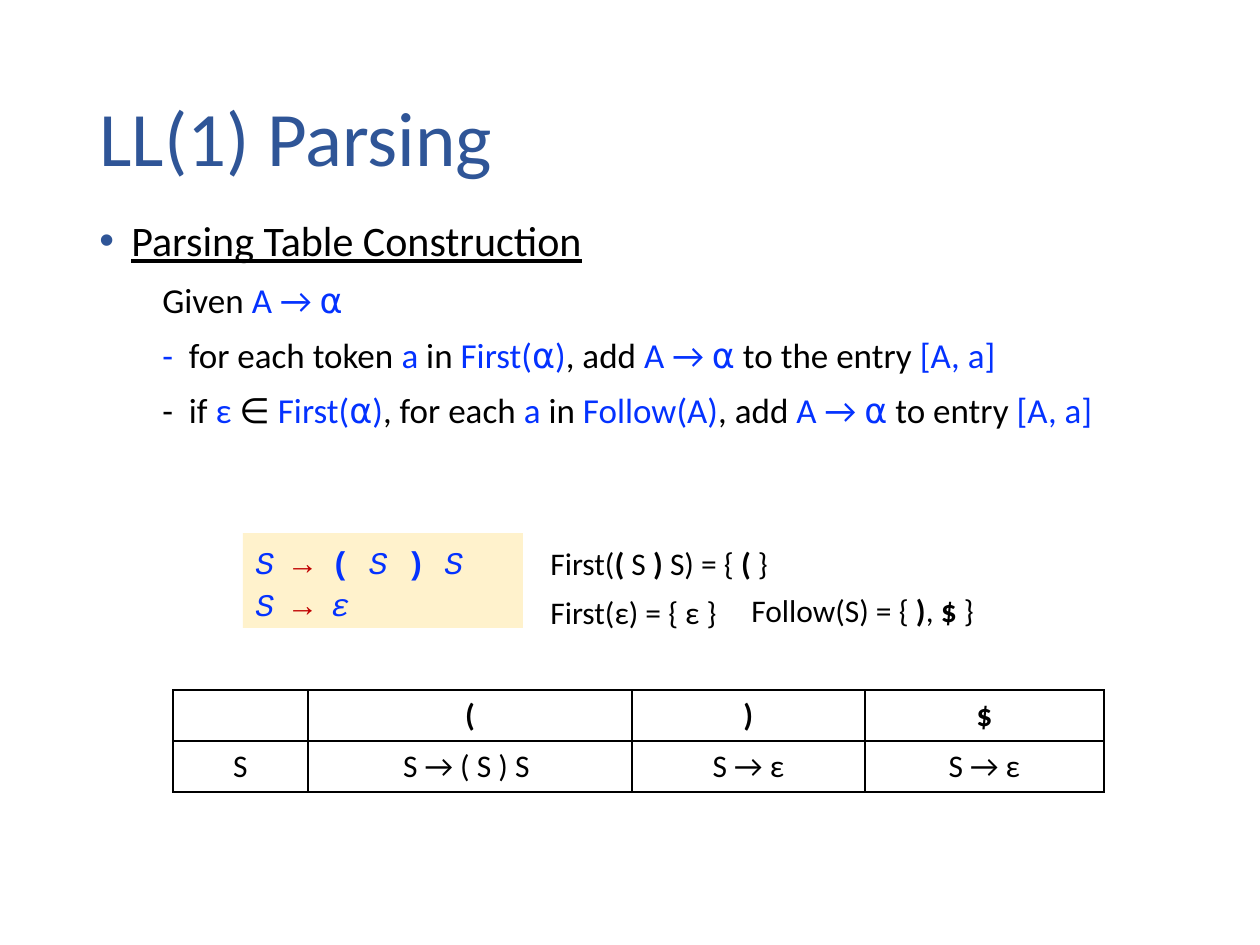
"""Build the LL(1) parsing table construction slide."""
from dataclasses import dataclass, replace
from typing import Optional

from lxml import etree
from pptx import Presentation
from pptx.dml.color import RGBColor
from pptx.enum.shapes import MSO_SHAPE
from pptx.enum.text import MSO_ANCHOR, MSO_AUTO_SIZE, PP_ALIGN
from pptx.oxml.ns import qn
from pptx.util import Emu, Pt

PX = 914400 / 126
CENTER = PP_ALIGN.CENTER
MIDDLE = MSO_ANCHOR.MIDDLE
FIT_SHAPE = MSO_AUTO_SIZE.SHAPE_TO_FIT_TEXT
NO_FIT = MSO_AUTO_SIZE.NONE
RECTANGLE = MSO_SHAPE.RECTANGLE
TITLE_ONLY = 5
COLORS = {"title": "2F5597", "black": "000000", "blue": "0432FF", "red": "C00000", "cream": "FFF2CC"}


@dataclass(frozen=True)
class Style:
    size: int = 18
    color: str = "black"
    font: str = "Calibri"
    bold: bool = False
    italic: bool = False
    underline: bool = False


@dataclass(frozen=True)
class Span:
    text: str
    style: Style


@dataclass(frozen=True)
class Line:
    spans: list[Span]
    indent: int = 0
    bullet: Optional[str] = None


@dataclass(frozen=True)
class TextBlock:
    left: int
    top: int
    width: int
    height: int
    lines: list[Line]
    spacing: object = 1.0
    before: int = 0
    wrap: bool = True
    fit: MSO_AUTO_SIZE = FIT_SHAPE


PLAIN = Style()
BOLD = Style(bold=True)
BODY = Style(size=20)
FORMULA = Style(size=20, color="blue")
VARIABLE = Style(color="blue", font="Courier New", italic=True)
TERMINAL = replace(VARIABLE, italic=False, bold=True)
ARROW = Span("→ ", replace(VARIABLE, italic=False, color="red"))


def px(value: int) -> Emu:
    return Emu(round(value * PX))


def rgb(name: str) -> RGBColor:
    return RGBColor.from_string(COLORS[name])


def alternate(text: str, plain: Style, marked: Style) -> list[Span]:
    """Split text at bars, giving every second part the marked style."""
    parts = text.split("|")
    return [Span(part, (plain, marked)[index % 2]) for index, part in enumerate(parts) if part]


def format_run(run, style: Style) -> None:
    font = run.font
    font.name, font.size = style.font, Pt(style.size)
    font.bold, font.italic, font.underline = style.bold, style.italic, style.underline
    font.color.rgb = rgb(style.color)


def add_spans(para, spans: list[Span]) -> None:
    for span in spans:
        run = para.add_run()
        run.text = span.text
        format_run(run, span.style)


def set_bullet(para, line: Line) -> None:
    properties = para._p.get_or_add_pPr()
    properties.set("marL", str(px(line.indent)))
    properties.set("indent", str(-px(line.indent) if line.bullet else 0))
    if line.bullet:
        color = etree.SubElement(properties, qn("a:buClr"))
        etree.SubElement(color, qn("a:srgbClr"), val=COLORS["title"])
        etree.SubElement(properties, qn("a:buFont"), typeface="Arial")
        etree.SubElement(properties, qn("a:buChar"), char=line.bullet)


def add_text(page, block: TextBlock) -> None:
    box = page.shapes.add_textbox(px(block.left), px(block.top), px(block.width), px(block.height))
    frame = box.text_frame
    frame.word_wrap = block.wrap
    frame.auto_size = block.fit
    for index, line in enumerate(block.lines):
        para = frame.add_paragraph() if index else frame.paragraphs[0]
        para.line_spacing = block.spacing
        para.space_before = Pt(block.before)
        set_bullet(para, line)
        add_spans(para, line.spans)


def add_title(page, text: str) -> None:
    title = page.shapes.title
    title.left, title.top, title.width, title.height = map(px, (87, 50, 1086, 183))
    frame = title.text_frame
    frame.text = text
    frame.auto_size = NO_FIT
    frame.vertical_anchor = MIDDLE
    para = frame.paragraphs[0]
    para.alignment = PP_ALIGN.LEFT
    para.line_spacing = 0.9
    format_run(para.runs[0], Style(size=44, color="title"))


def add_panel(page) -> None:
    panel = page.shapes.add_shape(RECTANGLE, px(243), px(533), px(280), px(95))
    panel.shadow.inherit = False
    panel.fill.solid()
    panel.fill.fore_color.rgb = rgb("cream")
    panel.line.fill.background()


def set_borders(cell) -> None:
    properties = cell._tc.get_or_add_tcPr()
    for index, side in enumerate(("lnL", "lnR", "lnT", "lnB")):
        border = etree.Element(qn(f"a:{side}"), w=str(Pt(1)))
        fill = etree.SubElement(border, qn("a:solidFill"))
        etree.SubElement(fill, qn("a:srgbClr"), val=COLORS["black"])
        properties.insert(index, border)


def add_parsing_table(page, rows: list[list[str]], widths: list[int], height: int) -> None:
    frame = page.shapes.add_table(
        len(rows), len(widths), px(173), px(690), px(sum(widths)), px(height * len(rows)))
    table = frame.table
    table.first_row = table.horz_banding = False
    for column, width in zip(table.columns, widths):
        column.width = px(width)
    for row_index, texts in enumerate(rows):
        table.rows[row_index].height = px(height)
        for column_index, text in enumerate(texts):
            cell = table.cell(row_index, column_index)
            cell.fill.background()
            set_borders(cell)
            para = cell.text_frame.paragraphs[0]
            para.alignment = CENTER
            if text:
                add_spans(para, [Span(text, PLAIN if row_index else BOLD)])


def main() -> None:
    deck = Presentation()
    deck.slide_width, deck.slide_height = px(1260), px(945)
    page = deck.slides.add_slide(deck.slide_layouts[TITLE_ONLY])
    add_title(page, "LL(1) Parsing")

    heading = Span("Parsing Table Construction", Style(size=24, underline=True))
    steps = [
        "Given |A → ⍺",
        "|-  |for each token |a| in |First(⍺)|, add |A → ⍺| to the entry |[A, a]",
        "-  if |ε| ∈ |First(⍺)|, for each |a| in |Follow(A)|, add |A → ⍺| to entry |[A, a]",
    ]
    body = [Line([heading], 32, "•")]
    body += [Line(alternate(step, BODY, FORMULA), 63) for step in steps]
    add_text(page, TextBlock(87, 214, 1173, 247, body, 0.9, 10, fit=NO_FIT))

    add_panel(page)
    start = [Span("S ", VARIABLE), ARROW]
    nested = [Span("( ", TERMINAL), Span("S ", VARIABLE), Span(") ", TERMINAL), Span("S", VARIABLE)]
    grammar = [Line(start + nested), Line(start + [Span("ε", VARIABLE)])]
    add_text(page, TextBlock(243, 533, 359, 95, grammar, 1.1))

    add_parsing_table(
        page,
        [["", "(", ")", "$"], ["S", "S → ( S ) S ", "S → ε", "S → ε"]],
        [135, 324, 233, 239],
        51,
    )

    first_sets = ["First(|(| S |) |S) = { |( |}", "First(ε) = { ε }"]
    first_lines = [Line(alternate(text, PLAIN, BOLD)) for text in first_sets]
    follow_line = Line(alternate("Follow(S) = { |)|, |$| }", PLAIN, BOLD))
    add_text(page, TextBlock(538, 527, 246, 107, first_lines, Pt(28), wrap=False))
    add_text(page, TextBlock(739, 585, 251, 50, [follow_line], wrap=False))
    deck.save("out.pptx")


if __name__ == "__main__":
    main()
